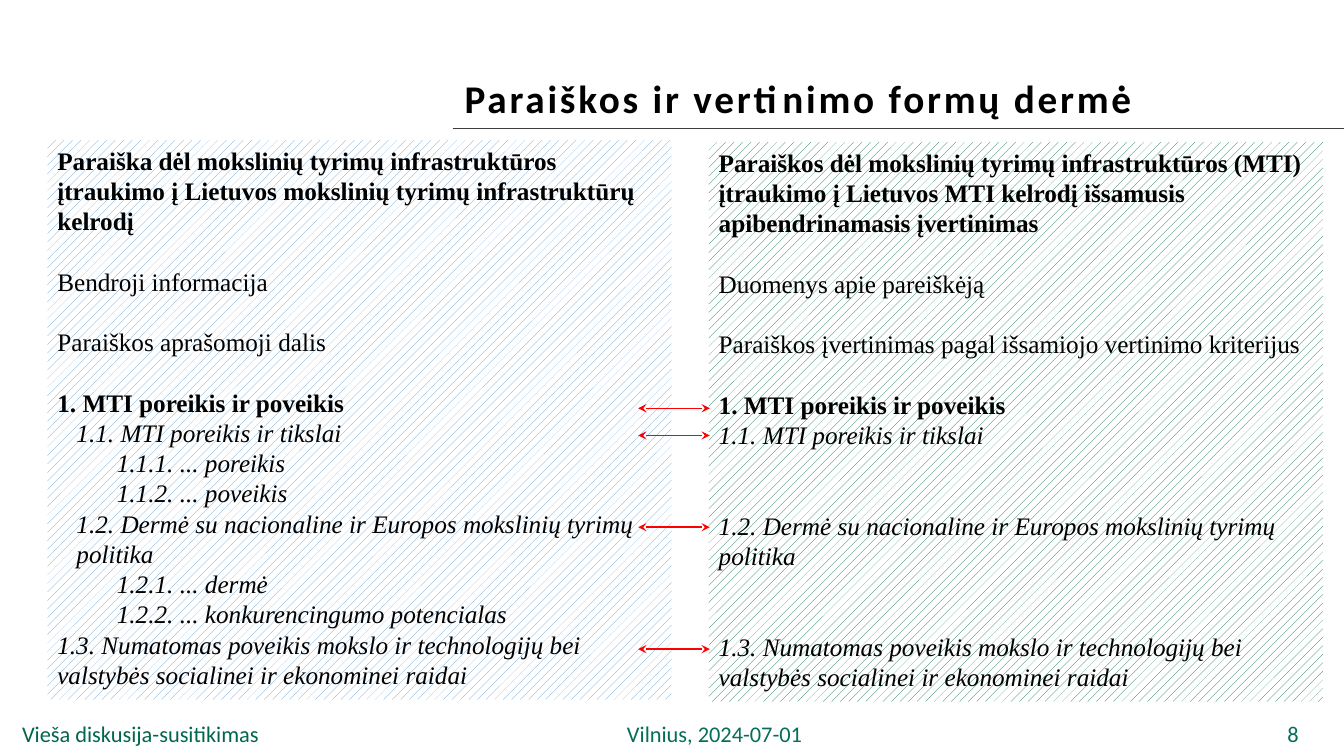
import pptx
import pptx.util
import pptx.dml.color
import pptx.enum.dml
import pptx.enum.shapes
import pptx.enum.text
import lxml.etree
from dataclasses import dataclass
from pptx.util import Inches, Pt


@dataclass(frozen=True)
class Theme:
    """Colours, fonts and type sizes."""
    ink: str = "000000"
    rule: str = "3B3C3B"
    blue: str = "5B9BD5"
    green: str = "00664C"
    teal: str = "046E58"
    red: str = "FF0000"
    paper: str = "FFFFFF"
    sans: str = "Calibri"
    serif: str = "Times New Roman"
    title: int = 28
    body: int = 18
    foot: int = 16
    row: float = 21.6


THEME = Theme()
LEFT = [
    ("Paraiška dėl mokslinių tyrimų infrastruktūros įtraukimo į Lietuvos "
     "mokslinių tyrimų infrastruktūrų kelrodį", "b", 0, 0),
    ("Bendroji informacija", "", 0, 1),
    ("Paraiškos aprašomoji dalis", "", 0, 1),
    ("1. MTI poreikis ir poveikis", "b", 0, 1),
    ("1.1. MTI poreikis ir tikslai", "i", 0.19, 0),
    ("1.1.1. ... poreikis", "i", 0.59, 0),
    ("1.1.2. ... poveikis", "i", 0.59, 0),
    ("1.2. Dermė su nacionaline ir Europos mokslinių tyrimų politika", "i", 0.19, 0),
    ("1.2.1. ... dermė", "i", 0.59, 0),
    ("1.2.2. ... konkurencingumo potencialas", "i", 0.59, 0),
    ("1.3. Numatomas poveikis mokslo ir technologijų bei valstybės "
     "socialinei ir ekonominei raidai", "i", 0, 0),
]
RIGHT = [
    ("Paraiškos dėl mokslinių tyrimų infrastruktūros (MTI) įtraukimo į "
     "Lietuvos MTI kelrodį išsamusis apibendrinamasis įvertinimas", "b", 0, 0),
    ("Duomenys apie pareiškėją", "", 0, 1),
    ("Paraiškos įvertinimas pagal išsamiojo vertinimo kriterijus", "", 0, 1),
    ("1. MTI poreikis ir poveikis", "b", 0, 1),
    ("1.1. MTI poreikis ir tikslai", "i", 0, 0),
    ("1.2. Dermė su nacionaline ir Europos mokslinių tyrimų politika", "i", 0, 2),
    ("1.3. Numatomas poveikis mokslo ir technologijų bei valstybės "
     "socialinei ir ekonominei raidai", "i", 0, 2),
]


def tint(code):
    """Turn a hex code into a colour."""
    return pptx.dml.color.RGBColor.from_string(code)


def style(font, face, size, color):
    """Set face, size and colour of a font."""
    font.name, font.size = face, Pt(size)
    font.color.rgb = tint(color)


def add_tag(node, tag, **attrs):
    """Append a drawing element to a node."""
    return lxml.etree.SubElement(node, pptx.oxml.ns.qn(tag), attrs)


def add_line(slide, start, end, color, width, heads=False):
    """Draw a straight line, with stealth heads if asked."""
    line = slide.shapes.add_connector(
        pptx.enum.shapes.MSO_CONNECTOR.STRAIGHT,
        *(Inches(n) for n in (*start, *end)))
    line.line.color.rgb = tint(color)
    line.line.width = Pt(width)
    if heads:
        for tag in ("a:headEnd", "a:tailEnd"):
            add_tag(line.line._get_or_add_ln(), tag, type="stealth")
    add_tag(line._element.spPr, "a:effectLst")


def add_title(slide, box):
    """Write the title and the rule under it."""
    x, y, w, h = box
    frame = slide.shapes.add_textbox(*(Inches(n) for n in box)).text_frame
    frame.word_wrap = True
    frame.vertical_anchor = pptx.enum.text.MSO_ANCHOR.BOTTOM
    par = frame.paragraphs[0]
    par.text = "Paraiškos ir vertinimo formų dermė"
    par.line_spacing = Pt(34)
    run = par.runs[0]
    style(run.font, THEME.sans, THEME.title, THEME.ink)
    run.font.bold = True
    run._r.get_or_add_rPr().set("spc", "200")
    base = y + h + 0.02
    add_line(slide, (x - 0.02, base), (x + w, base), THEME.rule, 0.5)


def add_panel(slide, box, color, rows):
    """Draw a patterned panel with its outline of the form."""
    panel = slide.shapes.add_shape(
        pptx.enum.shapes.MSO_SHAPE.RECTANGLE, *(Inches(n) for n in box))
    panel.shadow.inherit = False
    panel.line.fill.background()
    panel.fill.patterned()
    panel.fill.pattern = pptx.enum.dml.MSO_PATTERN.PERCENT_20
    panel.fill.fore_color.rgb = tint(color)
    panel.fill.back_color.rgb = tint(THEME.paper)
    frame = panel.text_frame
    frame.word_wrap = True
    frame.vertical_anchor = pptx.enum.text.MSO_ANCHOR.TOP
    for k, (text, face, indent, gap) in enumerate(rows):
        par = frame.add_paragraph() if k else frame.paragraphs[0]
        par.text = text
        par.alignment = pptx.enum.text.PP_ALIGN.LEFT
        if gap:
            par.space_before = Pt(gap * THEME.row)
        if indent:
            par._p.get_or_add_pPr().set("marL", str(Inches(indent)))
        font = par.runs[0].font
        style(font, THEME.serif, THEME.body, THEME.ink)
        font.bold, font.italic = face == "b", face == "i"


def add_links(slide, box, drops):
    """Draw the double arrows that join matching rows."""
    x, y, w, h = box
    for drop in drops:
        add_line(slide, (x, y + drop), (x + w, y + drop), THEME.red, 1, True)


def add_foot(slide, box):
    """Write event, place with date, and page number on tab stops."""
    frame = slide.shapes.add_textbox(*(Inches(n) for n in box)).text_frame
    frame.word_wrap = True
    par = frame.paragraphs[0]
    tabs = add_tag(par._p.get_or_add_pPr(), "a:tabLst")
    for stop in (6, 12.55):
        add_tag(tabs, "a:tab", pos=str(Inches(stop)), algn="l")
    parts = (("Vieša diskusija-susitikimas", THEME.green),
             ("\tVilnius, 2024-07-01\t8", THEME.teal))
    for text, color in parts:
        run = par.add_run()
        run.text = text
        style(run.font, THEME.sans, THEME.foot, color)


def main():
    """Build and save the slide."""
    deck = pptx.Presentation()
    deck.slide_width, deck.slide_height = Inches(13.33), Inches(7.5)
    slide = deck.slides.add_slide(deck.slide_layouts[6])
    add_title(slide, (4.51, 0.21, 8.82, 1.04))
    add_panel(slide, (0.47, 1.39, 6.19, 5.55), THEME.blue, LEFT)
    add_panel(slide, (7.03, 1.41, 6.09, 5.55), THEME.green, RIGHT)
    add_links(slide, (6.33, 4.05, 0.71, 2.39), (0, 0.27, 1.18, 2.39))
    add_foot(slide, (0.12, 7.1, 12.98, 0.37))
    deck.save("out.pptx")


if __name__ == "__main__":
    main()
